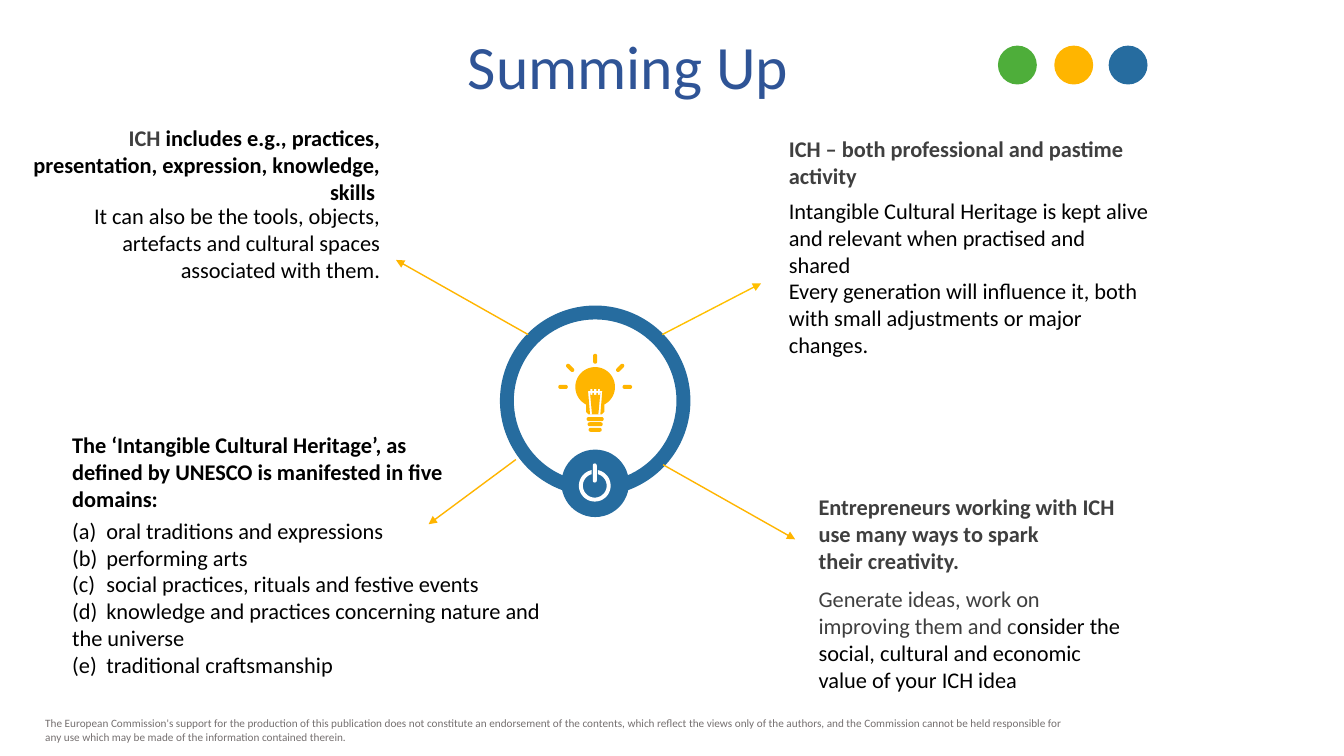
"""Build the "Summing Up" slide about intangible cultural heritage."""
from dataclasses import dataclass
from math import cos, radians, sin

from lxml import etree
from pptx import Presentation
from pptx import util as u
from pptx.dml.color import RGBColor
from pptx.enum import shapes, text
from pptx.oxml.ns import qn


@dataclass(frozen=True)
class Theme:
    font: str = "Calibri"
    title_size: int = 44
    body_size: int = 16
    footer_size: int = 8
    title: str = "2F5496"
    ink: str = "000000"
    soft: str = "3F3F3F"
    footer: str = "757070"
    blue: str = "266C9F"
    yellow: str = "FFB500"
    amber: str = "FFC000"
    green: str = "4EAE3A"
    white: str = "FFFFFF"


theme = Theme()

TITLE = "Summing Up"
FOOTER = (
    "The European Commission's support for the production of this publication does not "
    "constitute an endorsement of the contents, which reflect the views only of the authors, "
    "and the Commission cannot be held responsible for any use which may be made of the "
    "information contained therein."
)
DOMAINS = [
    "oral traditions and expressions",
    "performing arts",
    "social practices, rituals and festive events",
    "knowledge and practices concerning nature and the universe",
    "traditional craftsmanship",
]
domain_lines = [[(f"({letter})\t{domain}", theme.ink)] for letter, domain in zip("abcde", DOMAINS)]

# left, top, width, line count, paragraphs of (text, colour), format
POINTS = [
    (0.46, 3.0, 9.37, 3, [[("ICH ", theme.soft), (
        "includes e.g., practices, presentation, expression, knowledge, skills ", theme.ink)]],
     dict(bold=True, align="RIGHT")),
    (0.46, 4.97, 9.37, 3, [[(
        "It can also be the tools, objects, artefacts and cultural spaces associated with them.",
        theme.ink)]], dict(align="RIGHT")),
    (1.57, 10.75, 10.41, 3, [[(
        "The ‘Intangible Cultural Heritage’, as defined by UNESCO is manifested in five domains:",
        theme.ink)]], dict(bold=True)),
    (1.57, 12.9, 12.7, 6, domain_lines, dict(tab=0.86)),
    (19.63, 3.28, 8.97, 2, [[("ICH – both professional and pastime activity", theme.soft)]],
     dict(bold=True)),
    (19.63, 4.84, 9.68, 6, [
        [("Intangible Cultural Heritage is kept alive and relevant when practised and\nshared",
          theme.ink)],
        [("Every generation will influence it, both with small adjustments or major changes.",
          theme.ink)]], {}),
    (20.38, 12.3, 8.2, 3, [[(
        "Entrepreneurs working with ICH use many ways to spark\ntheir creativity.", theme.soft)]],
     dict(bold=True)),
    (20.38, 14.62, 8.2, 4, [[("Generate ideas, work on improving them and c", theme.soft), (
        "onsider the social, cultural and economic value of your ICH idea", theme.ink)]], {}),
]
ARROWS = [
    (13.31, 8.43, 9.98, 6.55, theme.yellow),
    (16.69, 8.43, 19.18, 7.14, theme.amber),
    (16.71, 11.71, 20.04, 13.59, theme.yellow),
    (13.0, 11.58, 10.8, 13.21, theme.yellow),
]
DOTS = [(25.15, theme.green), (26.57, theme.yellow), (27.94, theme.blue)]
BULB = (15.0, 9.75)
POWER = (14.99, 12.24)
RAYS = [(0, -0.71, 0.25, 90), (-0.81, 0, 0.24, 0), (0.81, 0, 0.24, 0),
        (0.63, -0.48, 0.25, -45), (-0.63, -0.48, 0.25, 45)]
BASE_BARS = [(0, 0.81, 0.43, 0), (0, 0.94, 0.38, 0), (0, 1.08, 0.33, 0)]
FILAMENT_HALF = [
    (0.03, 0.05), (0.03, 0.1), (0.07, 0.1), (0.07, 0.05), (0.12, 0.05), (0.12, 0.1),
    (0.18, 0.1), (0.13, 0.69), (0.08, 0.69), (0.13, 0.15), (0.12, 0.15), (0.12, 0.2),
    (0.07, 0.2), (0.07, 0.15), (0.03, 0.15), (0.03, 0.2),
]


def write(slide, left, top, width, height, paragraphs, *, size=theme.body_size, bold=False,
          align="LEFT", spacing=None, tab=None):
    frame = slide.shapes.add_textbox(*map(u.Cm, (left, top, width, height))).text_frame
    frame.word_wrap = True
    for index, runs in enumerate(paragraphs):
        line = frame.add_paragraph() if index else frame.paragraphs[0]
        if tab:
            stops = etree.SubElement(line._p.get_or_add_pPr(), qn("a:tabLst"))
            etree.SubElement(stops, qn("a:tab"), pos=str(u.Cm(tab)), algn="l")
        line.alignment = getattr(text.PP_ALIGN, align)
        if spacing:
            line.line_spacing = spacing
        for words, color in runs:
            for part, piece in enumerate(words.split("\n")):
                if part:
                    line.add_line_break()
                run = line.add_run()
                run.text = piece
                run.font.name, run.font.size, run.font.bold = theme.font, u.Pt(size), bold
                run.font.color.rgb = RGBColor.from_string(color)


def paint(shape, color):
    shape.shadow.inherit = False
    shape.fill.solid()
    shape.fill.fore_color.rgb = RGBColor.from_string(color)
    shape.line.fill.background()
    return shape


def disc(slide, left, top, size, color, kind="OVAL"):
    preset = getattr(shapes.MSO_SHAPE, kind)
    return paint(slide.shapes.add_shape(preset, *map(u.Cm, (left, top, size, size))), color)


def arrow(slide, x1, y1, x2, y2, color):
    link = slide.shapes.add_connector(shapes.MSO_CONNECTOR.STRAIGHT, *map(u.Cm, (x1, y1, x2, y2)))
    link.line.color.rgb = RGBColor.from_string(color)
    link.line.width = u.Pt(1)
    etree.SubElement(link.line._get_or_add_ln(), qn("a:tailEnd"), type="triangle")
    etree.SubElement(link._element.spPr, qn("a:effectLst"))


def arc(x, y, radius, start, end, steps=48):
    angles = [radians(start + (end - start) * i / steps) for i in range(steps + 1)]
    return [(x + radius * cos(a), y + radius * sin(a)) for a in angles]


def capsule(x, y, length, angle, width=0.1):
    radius, half = width / 2, (length - width) / 2
    dx, dy = half * cos(radians(angle)), half * sin(radians(angle))
    return (arc(x + dx, y + dy, radius, angle - 90, angle + 90, 12)
            + arc(x - dx, y - dy, radius, angle + 90, angle + 270, 12))


def icon(slide, center, contours, color):
    placed = [[(u.Cm(center[0] + x), u.Cm(center[1] + y)) for x, y in contour]
              for contour in contours]
    builder = slide.shapes.build_freeform(*placed[0][0])
    for index, contour in enumerate(placed):
        if index:
            builder.move_to(*contour[0])
        builder.add_line_segments(contour[1:], close=True)
    paint(builder.convert_to_shape(), color)


def main():
    deck = Presentation()
    deck.slide_width, deck.slide_height = u.Cm(33.87), u.Cm(19.05)
    slide = deck.slides.add_slide(deck.slide_layouts[6])

    write(slide, 0.89, 17.93, 26.57, 0.94, [[(FOOTER, theme.footer)]], size=theme.footer_size)
    write(slide, 7.29, 0.79, 17.09, 2.01, [[(TITLE, theme.title)]], size=theme.title_size,
          align="CENTER", spacing=0.9)

    disc(slide, 12.6, 7.7, 4.8, theme.blue, "DONUT").adjustments[0] = 0.073
    disc(slide, 14.15, 11.33, 1.7, theme.blue)
    glass = arc(0, 0, 0.5, 117.4, 422.6) + [
        (0.23, 0.63), (0.17, 0.69), (-0.17, 0.69), (-0.23, 0.63)]
    filament = FILAMENT_HALF + [(-x, y) for x, y in reversed(FILAMENT_HALF)]
    strokes = [capsule(*stroke) for stroke in RAYS + BASE_BARS]
    icon(slide, BULB, [glass, filament, *strokes], theme.yellow)
    ring = arc(0, 0, 0.4, -79, 259) + arc(0, 0, 0.3, 255, -75)
    icon(slide, POWER, [ring, capsule(0, -0.32, 0.48, 90)], theme.white)

    for ends in ARROWS:
        arrow(slide, *ends)
    for left, top, width, lines, paragraphs, style in POINTS:
        write(slide, left, top, width, 0.25 + 0.69 * lines, paragraphs, **style)
    for left, color in DOTS:
        disc(slide, left, 1.15, 0.98, color)

    deck.save("out.pptx")


if __name__ == "__main__":
    main()
